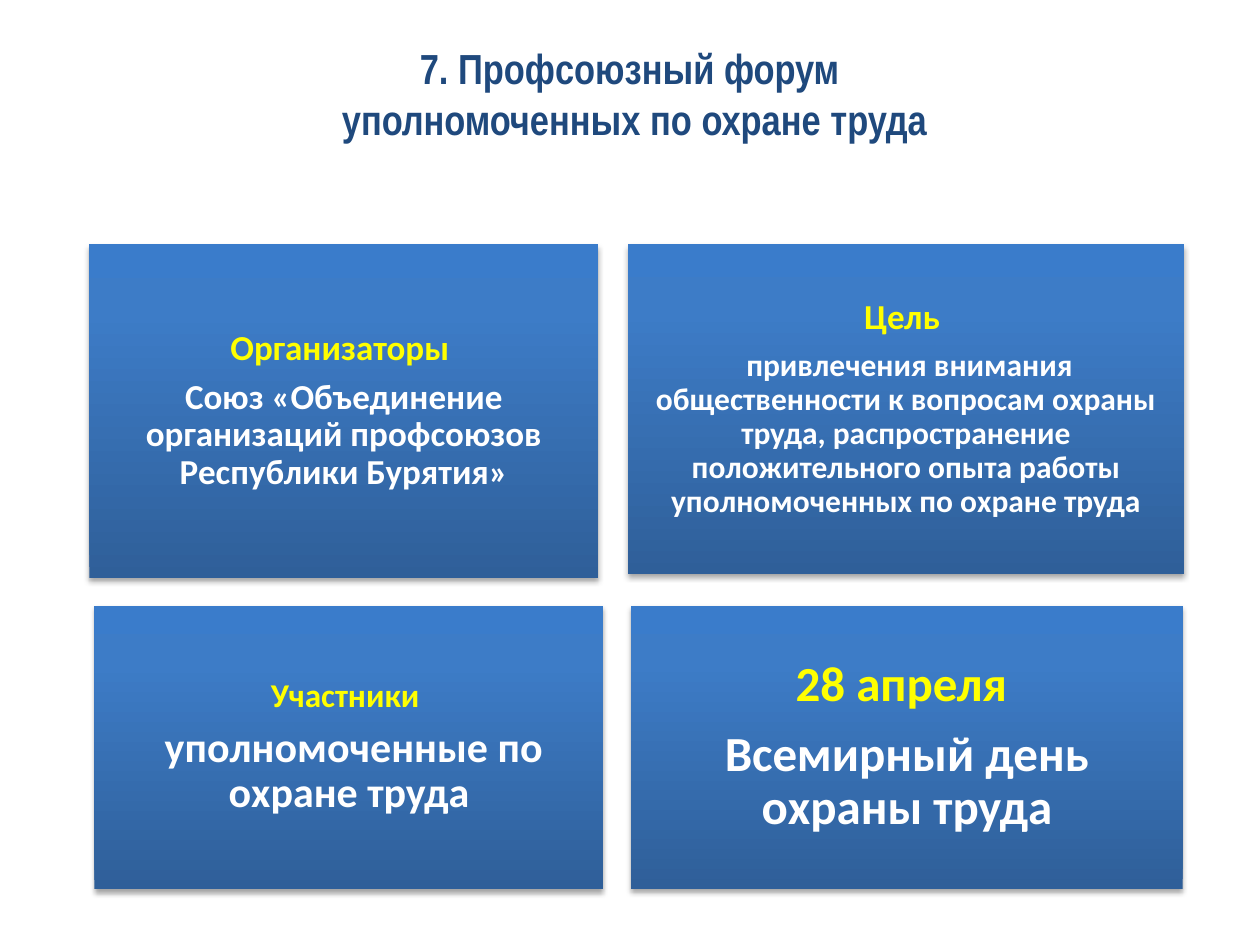
import copy
import pptx
import pptx.util
import pptx.dml.color
import pptx.enum.shapes
import pptx.enum.text
import pptx.oxml
from lxml import etree

Pt = pptx.util.Pt
A = "http://schemas.openxmlformats.org/drawingml/2006/main"

TITLE = ["7. Профсоюзный форум ", "уполномоченных по охране труда"]
TITLE_BOX = (31, 20.9, 663, 65.5)
GRADIENT = [(0, "2F5F99"), (0.8, "3D7CC7"), (1, "3A7CCB")]
CARDS = [
    {"box": (51.1, 139.7, 290.9, 190.8), "inset": 6, "after": 6,
     "head": ("Организаторы ", 20),
     "body": ("Союз «Объединение организаций профсоюзов Республики Бурятия»", 20)},
    {"box": (358.6, 139.7, 318.2, 188.6), "inset": 6, "after": 7,
     "head": ("Цель ", 20),
     "body": (" привлечения внимания общественности к вопросам охраны труда, "
              "распространение положительного опыта работы "
              "уполномоченных по охране труда", 18)},
    {"box": (54, 346.3, 290.9, 162), "inset": 6, "after": 6.6,
     "head": ("Участники ", 19),
     "body": (" уполномоченные по охране труда", 24)},
    {"box": (360.6, 346.3, 315.2, 161.5), "inset": 8.6, "after": 9.8,
     "head": ("28 апреля ", 28),
     "body": ("Всемирный день охраны труда", 28)},
]


def color(value):
    return pptx.dml.color.RGBColor.from_string(value)


def add_paragraph(tf, index, text, name, size, fill):
    p = tf.add_paragraph() if index else tf.paragraphs[0]
    p.alignment = pptx.enum.text.PP_ALIGN.CENTER
    r = p.add_run()
    r.text = text
    p.font.name, p.font.size, p.font.bold = name, Pt(size), True
    p.font.color.rgb = color(fill)
    return p


def outline_text(r):
    ln = pptx.oxml.parse_xml(
        f'<a:ln xmlns:a="{A}" w="{int(Pt(0.83))}"><a:solidFill>'
        '<a:srgbClr val="467AB8"/></a:solidFill></a:ln>')
    r.font._element.insert(0, ln)


def fill_gradient(sp):
    sp.fill.gradient()
    sp.fill.gradient_angle = 90
    stops = sp._element.spPr.find(f".//{{{A}}}gsLst")
    stops.insert(1, copy.deepcopy(stops[0]))
    for stop, (position, value) in zip(sp.fill.gradient_stops, GRADIENT):
        stop.position = position
        stop.color.rgb = color(value)


def add_shadow(sp):
    sp.shadow.inherit = False
    effects = sp._element.spPr.find(f"{{{A}}}effectLst")
    shadow = etree.SubElement(
        effects, f"{{{A}}}outerShdw", blurRad=str(int(Pt(3.1))),
        dist=str(int(Pt(1.8))), dir="5400000", rotWithShape="0")
    black = etree.SubElement(shadow, f"{{{A}}}srgbClr", val="000000")
    etree.SubElement(black, f"{{{A}}}alpha", val="35000")


def add_card(s, card):
    sp = s.shapes.add_shape(pptx.enum.shapes.MSO_SHAPE.RECTANGLE, *map(Pt, card["box"]))
    fill_gradient(sp)
    sp.line.fill.background()
    add_shadow(sp)
    tf = sp.text_frame
    tf.word_wrap = True
    tf.vertical_anchor = pptx.enum.text.MSO_ANCHOR.MIDDLE
    tf.margin_left = tf.margin_right = tf.margin_top = tf.margin_bottom = Pt(card["inset"])
    for i, (part, fill) in enumerate((("head", "FFFF00"), ("body", "FFFFFF"))):
        text, size = card[part]
        p = add_paragraph(tf, i, text, "Calibri", size, fill)
        p.line_spacing = 0.9
        p.space_after = Pt(card["after"])


def main():
    prs = pptx.Presentation()
    prs.slide_width, prs.slide_height = Pt(720), Pt(540)
    s = prs.slides.add_slide(prs.slide_layouts[6])
    tf = s.shapes.add_textbox(*map(Pt, TITLE_BOX)).text_frame
    tf.word_wrap = True
    for i, text in enumerate(TITLE):
        p = add_paragraph(tf, i, text, "Arial Narrow", 24, "1F497D")
        outline_text(p.runs[0])
    for card in CARDS:
        add_card(s, card)
    prs.save("out.pptx")


if __name__ == "__main__":
    main()
